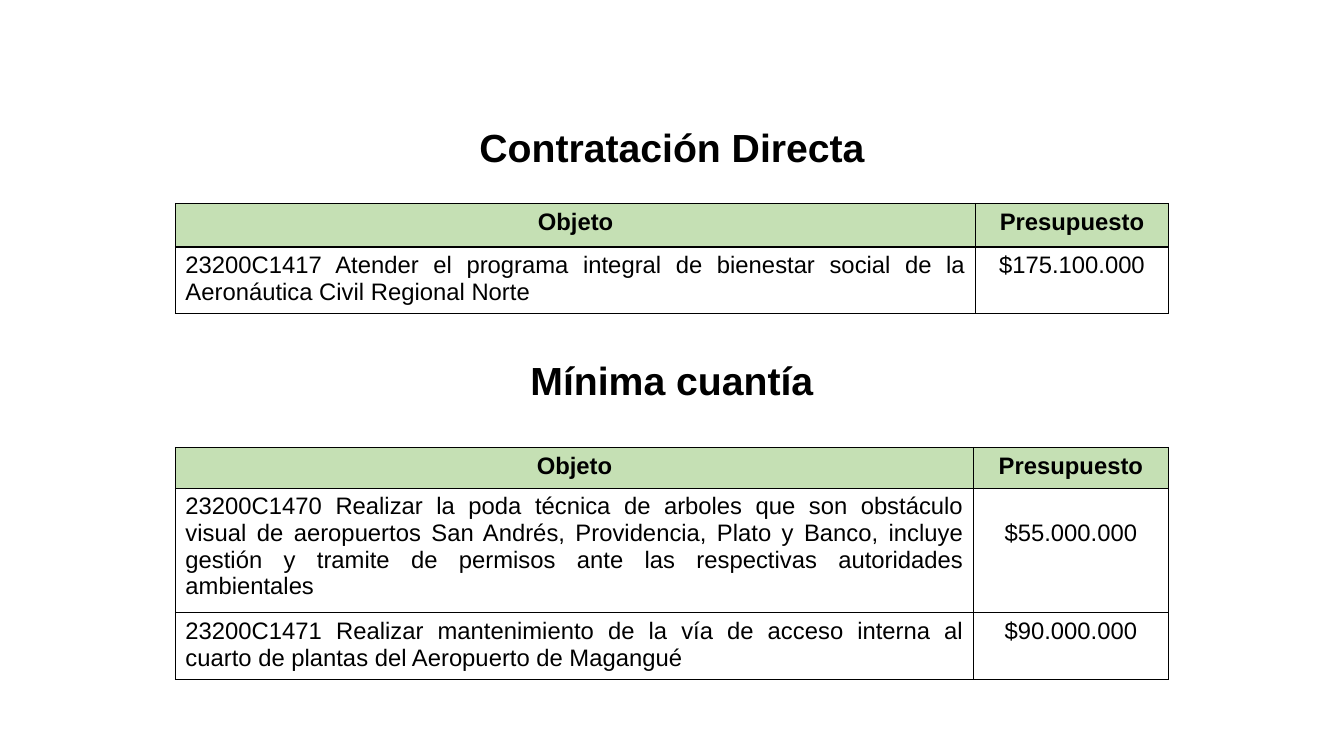
from dataclasses import dataclass

from lxml.etree import SubElement
from pptx import Presentation
from pptx.dml.color import RGBColor
from pptx.enum.text import MSO_ANCHOR, MSO_AUTO_SIZE, PP_ALIGN
from pptx.oxml.ns import qn
from pptx.util import Pt


@dataclass(frozen=True)
class Theme:
    font: str = "Arial"
    ink: RGBColor = RGBColor(0x00, 0x00, 0x00)
    header_fill: RGBColor = RGBColor(0xC5, 0xE0, 0xB4)
    heading_size: int = 28
    table_size: int = 17
    border: float = 1


THEME = Theme()
TABLE_LEFT = 125.3
TABLE_WIDTH = 709.2
CELL_MARGIN = 3.6
LINE_HEIGHT = 19.3


def write(frame, text, size, bold, align):
    paragraph = frame.paragraphs[0]
    paragraph.alignment = align
    run = paragraph.add_run()
    run.text = text
    run.font.name = THEME.font
    run.font.size = Pt(size)
    run.font.bold = bold
    run.font.color.rgb = THEME.ink


def draw_borders(cell):
    properties = cell._tc.get_or_add_tcPr()
    for position, side in enumerate(("lnL", "lnR", "lnT", "lnB")):
        line = SubElement(properties, qn(f"a:{side}"), w=str(Pt(THEME.border)))
        fill = SubElement(line, qn("a:solidFill"))
        SubElement(fill, qn("a:srgbClr"), val=str(THEME.ink))
        properties.insert(position, line)


presentation = Presentation()
presentation.slide_width = Pt(960)
presentation.slide_height = Pt(540)
slide = presentation.slides.add_slide(presentation.slide_layouts[5])

# Headings
direct_heading = slide.shapes.title
direct_heading.left, direct_heading.top = Pt(95), Pt(84.2)
direct_heading.width, direct_heading.height = Pt(770), Pt(41)
minimum_heading = slide.shapes.add_textbox(
    Pt(TABLE_LEFT), Pt(251.3), Pt(TABLE_WIDTH), Pt(41))

for heading, text in ((direct_heading, "Contratación Directa"),
                      (minimum_heading, "Mínima cuantía")):
    frame = heading.text_frame
    frame.word_wrap = True
    frame.auto_size = MSO_AUTO_SIZE.NONE
    frame.vertical_anchor = MSO_ANCHOR.TOP
    write(frame, text, THEME.heading_size, True, PP_ALIGN.CENTER)

# Contract tables: top, budget column width, row heights,
# then purpose, budget and the text line on which the budget stands
HEADER = ("Objeto", "Presupuesto", 0)
contract_tables = (
    (145.4, 137.5, (31, 47.5), (
        HEADER,
        ("23200C1417 Atender el programa integral de bienestar social de la "
         "Aeronáutica Civil Regional Norte", "$175.100.000", 0),
    )),
    (319.7, 139, (29, 89, 47.5), (
        HEADER,
        ("23200C1470 Realizar la poda técnica de arboles que son obstáculo "
         "visual de aeropuertos San Andrés, Providencia, Plato y Banco, incluye "
         "gestión y tramite de permisos ante las respectivas autoridades "
         "ambientales", "$55.000.000", 1),
        ("23200C1471 Realizar mantenimiento de la vía de acceso interna al "
         "cuarto de plantas del Aeropuerto de Magangué", "$90.000.000", 0),
    )),
)

for top, budget_width, heights, contracts in contract_tables:
    table = slide.shapes.add_table(
        len(contracts), 2, Pt(TABLE_LEFT), Pt(top),
        Pt(TABLE_WIDTH), Pt(sum(heights))).table
    table.first_row = table.horz_banding = False
    table.columns[0].width = Pt(TABLE_WIDTH - budget_width)
    table.columns[1].width = Pt(budget_width)

    for row, (height, (purpose, budget, budget_line)) in enumerate(
            zip(heights, contracts)):
        table.rows[row].height = Pt(height)
        is_header = row == 0
        for column, text in enumerate((purpose, budget)):
            cell = table.cell(row, column)
            if is_header:
                cell.fill.solid()
                cell.fill.fore_color.rgb = THEME.header_fill
            else:
                cell.fill.background()
            draw_borders(cell)
            is_purpose = column == 0 and not is_header
            write(cell.text_frame, text, THEME.table_size, is_header,
                  PP_ALIGN.JUSTIFY if is_purpose else PP_ALIGN.CENTER)
        table.cell(row, 1).margin_top = Pt(CELL_MARGIN + budget_line * LINE_HEIGHT)

presentation.save("out.pptx")
